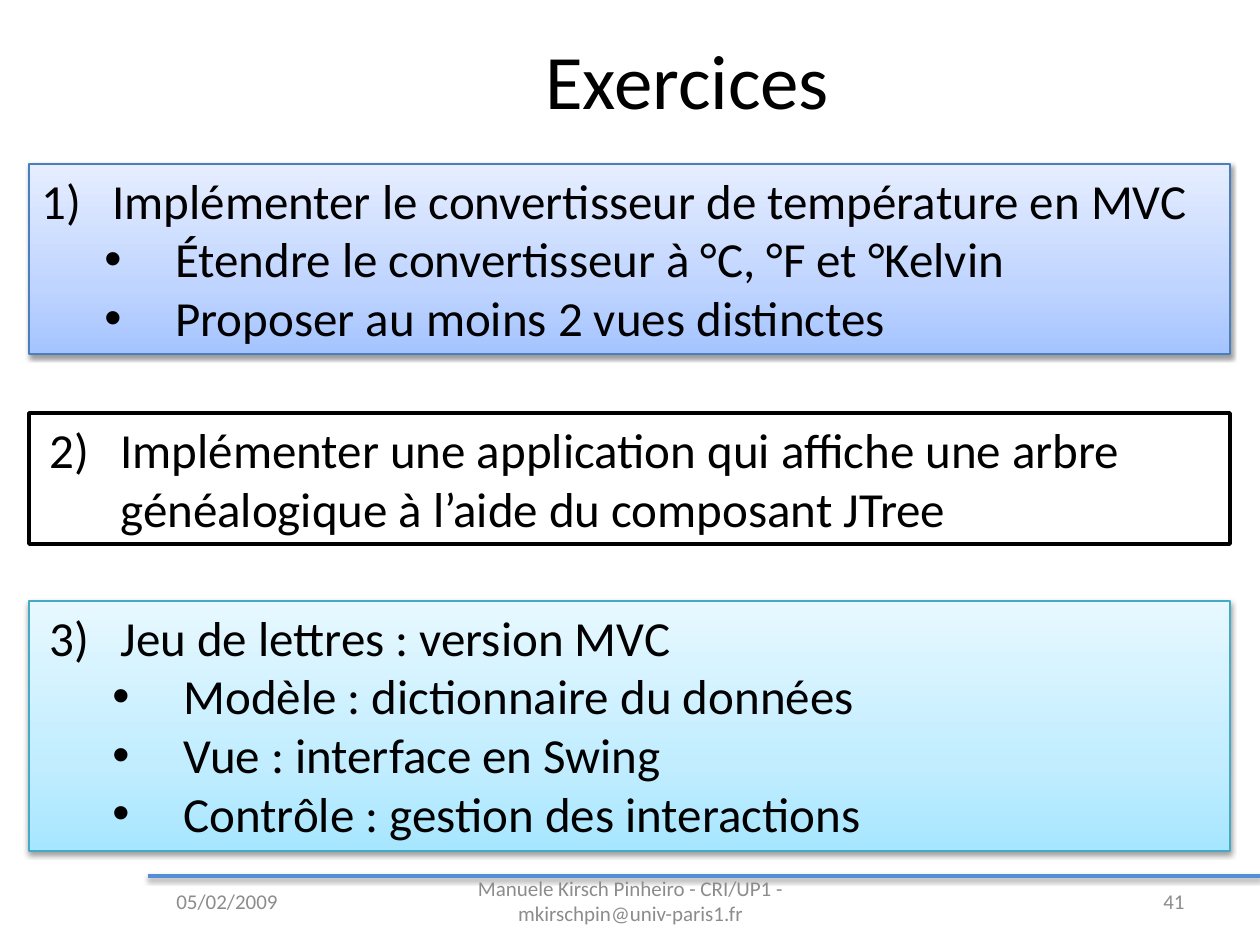
from copy import deepcopy

from lxml import etree
from pptx import Presentation
from pptx import util as u
from pptx.dml.color import RGBColor
from pptx.enum import shapes, text
from pptx.oxml.ns import qn

PX = 914400 / 126
THEME = {
    "font": "Calibri", "title": 44, "body": 28, "footer": 12,
    "ink": "000000", "grey": "8C8C8C", "white": "FFFFFF", "rule": "558ED5",
    "blue": ["A4C4FF", "BFD4FF", "E6EEFF"], "blue_line": "4B7EBC",
    "cyan": ["A7E6FF", "C1EDFF", "E7F8FF"], "cyan_line": "46AAC5",
}


def px(*lengths):
    return [u.Emu(round(n * PX)) for n in lengths]


def style(p, size, color, align):
    p.alignment = align
    for r in p.runs:
        r.font.name = THEME["font"]
        r.font.size = u.Pt(size)
        r.font.color.rgb = RGBColor.from_string(color)


prs = Presentation()
prs.slide_width, prs.slide_height = px(1260, 945)
s = prs.slides.add_slide(prs.slide_layouts[6])
shadowed = []

# Footer rule
rule = s.shapes.add_connector(shapes.MSO_CONNECTOR.STRAIGHT, *px(148, 876, 1260, 876))
rule.line.color.rgb = RGBColor.from_string(THEME["rule"])
rule.line.width = u.Pt(2)
etree.SubElement(rule._element.spPr, qn("a:effectLst"))
shadowed.append(rule)

# Title and footer
center, right = text.PP_ALIGN.CENTER, text.PP_ALIGN.RIGHT
labels = [
    ("Exercices", (178, 0, 1019, 158), "title", "ink", center),
    ("05/02/2009", (80, 876, 294, 50), "footer", "grey", center),
    ("Manuele Kirsch Pinheiro - CRI/UP1 - mkirschpin@univ-paris1.fr",
     (431, 876, 399, 50), "footer", "grey", center),
    ("41", (903, 876, 294, 50), "footer", "grey", right),
]
for words, place, size, color, align in labels:
    tf = s.shapes.add_textbox(*px(*place)).text_frame
    tf.word_wrap = True
    tf.vertical_anchor = text.MSO_ANCHOR.MIDDLE
    tf.text = words
    style(tf.paragraphs[0], THEME[size], THEME[color], align)

# Exercise boxes: top, height, margin, gradient, line colour, line width, lines
exercises = [
    (164, 190, 71, "blue", "blue_line", 0.75, [
        "Implémenter le convertisseur de température en MVC",
        "Étendre le convertisseur à °C, °F et °Kelvin",
        "Proposer au moins 2 vues distinctes"]),
    (413, 131, 79, None, "ink", 2, [
        "Implémenter une application qui affiche une arbre généalogique "
        "à l’aide du composant JTree"]),
    (601, 250, 79, "cyan", "cyan_line", 0.75, [
        "Jeu de lettres : version MVC",
        "Modèle : dictionnaire du données",
        "Vue : interface en Swing",
        "Contrôle : gestion des interactions"]),
]
for number, (top, height, margin, gradient, line, width, lines) in enumerate(exercises, 1):
    sp = s.shapes.add_shape(shapes.MSO_SHAPE.RECTANGLE, *px(29, top, 1201, height))
    sp.shadow.inherit = False
    sp.line.color.rgb = RGBColor.from_string(THEME[line])
    sp.line.width = u.Pt(width)
    if gradient:
        sp.fill.gradient()
        sp.fill.gradient_angle = 90
        stop_list = sp._element.spPr.find(".//" + qn("a:gsLst"))
        stop_list.append(deepcopy(stop_list[0]))
        for stop, position, color in zip(sp.fill.gradient_stops, (0, 0.35, 1), THEME[gradient]):
            stop.position = position
            stop.color.rgb = RGBColor.from_string(color)
        shadowed.append(sp)
    else:
        sp.fill.solid()
        sp.fill.fore_color.rgb = RGBColor.from_string(THEME["white"])

    # Numbered heading, then bulleted points one level down
    tf = sp.text_frame
    tf.word_wrap = True
    tf.vertical_anchor = text.MSO_ANCHOR.TOP
    tf.text = "\n".join(lines)
    for i, p in enumerate(tf.paragraphs):
        p.level = min(i, 1)
        pPr = p._p.get_or_add_pPr()
        indent, left = px(-71, margin + 63 * p.level)
        pPr.set("marL", str(left))
        pPr.set("indent", str(indent))
        if i:
            etree.SubElement(pPr, qn("a:buFont"), typeface="Arial")
            etree.SubElement(pPr, qn("a:buChar"), char="•")
        else:
            etree.SubElement(pPr, qn("a:buFont"), typeface="+mj-lt")
            etree.SubElement(pPr, qn("a:buAutoNum"), type="arabicParenR", startAt=str(number))
        style(p, THEME["body"], THEME["ink"], text.PP_ALIGN.LEFT)

# Soft shadows below the rule and the gradient boxes
for sp in shadowed:
    effects = sp._element.spPr.find(qn("a:effectLst"))
    shadow = etree.SubElement(effects, qn("a:outerShdw"), blurRad=str(u.Pt(3.1)),
                              dist=str(u.Pt(1.6)), dir="5400000", rotWithShape="0")
    color = etree.SubElement(shadow, qn("a:srgbClr"), val=THEME["ink"])
    etree.SubElement(color, qn("a:alpha"), val="38000")

prs.save("out.pptx")
